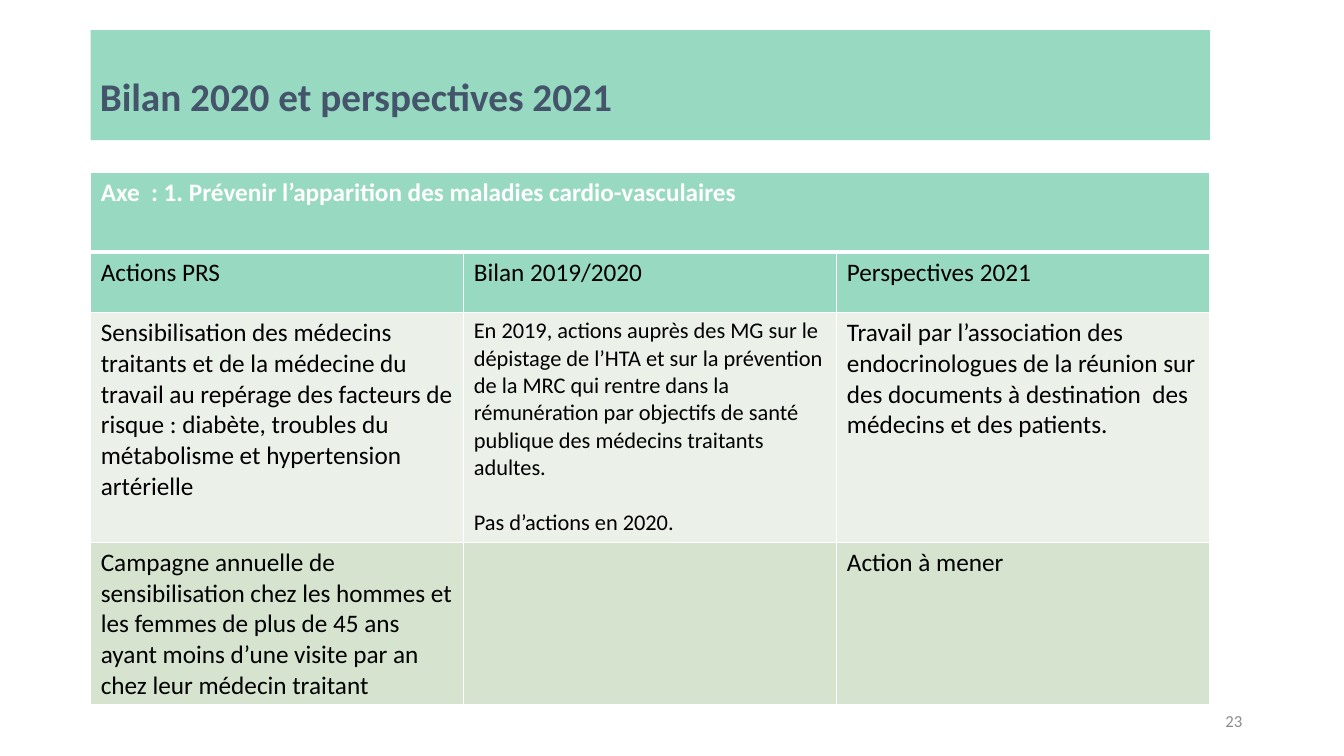
"""Build the slide on the 2020 review and 2021 outlook."""
import pptx
import pptx.dml.color
import pptx.enum.text
import pptx.oxml
import pptx.oxml.ns
import pptx.util

PX = 9144
FONT = "Calibri"
RGBColor = pptx.dml.color.RGBColor
MINT = RGBColor(0x98, 0xDA, 0xC1)
PALE = RGBColor(0xEB, 0xF1, 0xE9)
SAGE = RGBColor(0xD5, 0xE3, 0xCF)
SLATE = RGBColor(0x44, 0x54, 0x6A)
GREY = RGBColor(0x8C, 0x8C, 0x8C)
WHITE = RGBColor(0xFF, 0xFF, 0xFF)
BLACK = RGBColor(0, 0, 0)

LEFT, WIDTH = 90, 1110
ROW_HEIGHTS = [79, 60, 228, 161]
ROW_FILLS = [MINT, MINT, PALE, SAGE]
ROWS = [
    ["Axe  : 1. Prévenir l’apparition des maladies cardio-vasculaires", "", ""],
    ["Actions PRS", "Bilan 2019/2020", "Perspectives 2021"],
    [
        "Sensibilisation des médecins traitants et de la médecine du travail au repérage "
        "des facteurs de risque : diabète, troubles du métabolisme et hypertension artérielle",
        "En 2019, actions auprès des MG sur le dépistage de l’HTA et sur la prévention de la "
        "MRC qui rentre dans la rémunération par objectifs de santé publique des médecins "
        "traitants adultes.\nPas d’actions en 2020.",
        "Travail par l’association des endocrinologues de la réunion sur des documents à "
        "destination  des médecins et des patients.",
    ],
    [
        "Campagne annuelle de sensibilisation chez les hommes et les femmes de plus de 45 ans "
        "ayant moins d’une visite par an chez leur médecin traitant",
        "",
        "Action à mener",
    ],
]


def px(*lengths):
    """Turn pixel lengths into EMU."""
    return [length * PX for length in lengths]


def style_paragraph(paragraph, size, color, bold=False):
    """Set the font of a whole paragraph."""
    paragraph.font.name = FONT
    paragraph.font.size = pptx.util.Pt(size)
    paragraph.font.bold = bold
    paragraph.font.color.rgb = color


def add_title(slide, text):
    """Place and format the title banner."""
    title = slide.shapes.title
    title.left, title.top, title.width, title.height = px(LEFT, 30, WIDTH, 109)
    title.fill.solid()
    title.fill.fore_color.rgb = MINT
    frame = title.text_frame
    frame.text = text
    frame.word_wrap = True
    frame.auto_size = pptx.enum.text.MSO_AUTO_SIZE.NONE
    frame.vertical_anchor = pptx.enum.text.MSO_ANCHOR.MIDDLE
    frame.margin_left, frame.margin_top, frame.margin_right, frame.margin_bottom = px(9, 30, 9, 4)
    paragraph = frame.paragraphs[0]
    paragraph.alignment = pptx.enum.text.PP_ALIGN.LEFT
    paragraph.line_spacing = 0.93
    style_paragraph(paragraph, 28, SLATE, True)


def add_borders(cell, top, bottom):
    """Draw white borders around a cell, with widths in points."""
    properties = cell._tc.get_or_add_tcPr()
    for side, width in (("L", 1), ("R", 1), ("T", top), ("B", bottom)):
        properties.append(pptx.oxml.parse_xml(
            f'<a:ln{side} {pptx.oxml.ns.nsdecls("a")} w="{pptx.util.Pt(width)}">'
            f'<a:solidFill><a:srgbClr val="{WHITE}"/></a:solidFill></a:ln{side}>'))


def fill_cell(cell, text, row, column):
    """Write and format one table cell."""
    add_borders(cell, 3 if row == 1 else 1, 3 if row == 0 else 1)
    cell.fill.solid()
    cell.fill.fore_color.rgb = ROW_FILLS[row]
    cell.text = text
    size = 16 if (row, column) == (2, 1) else 18
    for index, paragraph in enumerate(cell.text_frame.paragraphs):
        style_paragraph(paragraph, size, BLACK if row else WHITE, row == 0)
        if index:
            paragraph.space_before = pptx.util.Pt(19.5)


def add_action_table(slide):
    """Add the table of actions, results and outlook."""
    columns = len(ROWS[0])
    frame = slide.shapes.add_table(
        len(ROWS), columns, *px(LEFT, 171, WIDTH, sum(ROW_HEIGHTS)))
    table = frame.table
    for row, texts in enumerate(ROWS):
        table.rows[row].height = ROW_HEIGHTS[row] * PX
        for column, text in enumerate(texts):
            fill_cell(table.cell(row, column), text, row, column)
    table.cell(0, 0).merge(table.cell(0, columns - 1))


def add_page_number(slide, text):
    """Add the page number at the lower right."""
    frame = slide.shapes.add_textbox(*px(942, 695, 300, 40)).text_frame
    frame.word_wrap = True
    frame.vertical_anchor = pptx.enum.text.MSO_ANCHOR.MIDDLE
    frame.text = text
    frame.paragraphs[0].alignment = pptx.enum.text.PP_ALIGN.RIGHT
    style_paragraph(frame.paragraphs[0], 12, GREY)


def main():
    """Build and save the presentation."""
    presentation = pptx.Presentation()
    presentation.slide_width, presentation.slide_height = px(1333, 750)
    slide = presentation.slides.add_slide(presentation.slide_layouts[5])
    add_title(slide, "Bilan 2020 et perspectives 2021")
    add_page_number(slide, "23")
    add_action_table(slide)
    presentation.save("out.pptx")


if __name__ == "__main__":
    main()
